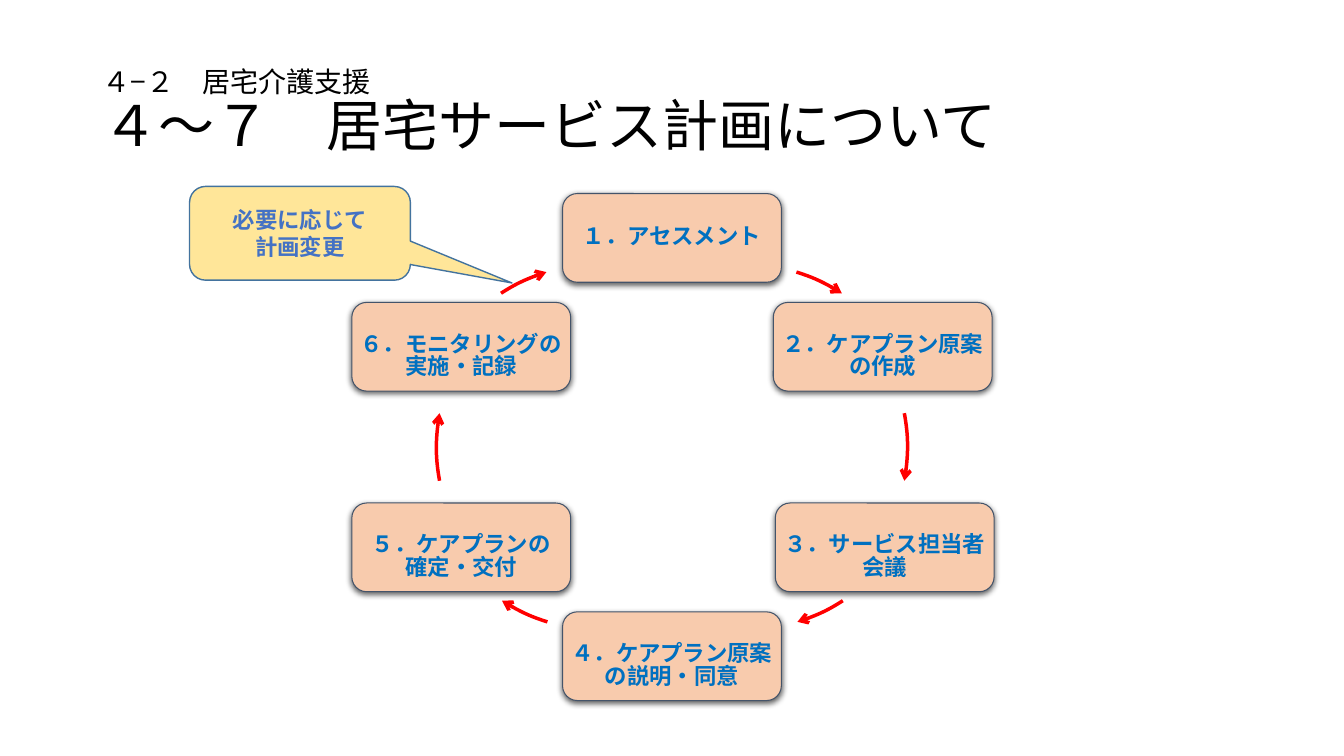
import pptx
import pptx.util
import pptx.dml.color
import pptx.enum.shapes
import pptx.enum.text
import pptx.oxml
import pptx.oxml.ns
from pptx.util import Inches

COLORS = {
    "title": "000000", "step": "F8CBAD", "step_line": "44546A",
    "step_text": "0070C0", "arrow": "FF0000", "note": "FFE699",
    "note_line": "43739E", "note_text": "4472C4", "shadow": "000000",
}
SHAPES = pptx.enum.shapes.MSO_SHAPE
CENTER = pptx.enum.text.PP_ALIGN.CENTER
LEFT = pptx.enum.text.PP_ALIGN.LEFT
NAMESPACE = pptx.oxml.ns.nsdecls("a")
STEP_SIZE = (2.17, 0.88)
CYCLE_WIDTH, CYCLE_HEIGHT = 13.33, 8.87  # twice the centre of the cycle
CIRCLE = 4.16  # side of the square around the circle of each arc

# Left, top, font and lines of each step
STEPS = [
    (5.58, 1.92, "Calibri", ["１．アセスメント"]),
    (7.67, 3.00, "Arial", ["２．ケアプラン原案の作成"]),
    (7.69, 4.99, "Arial", ["３．サービス担当者", "会議"]),
    (5.58, 6.07, "Calibri", ["４．ケアプラン原案", "の説明・同意"]),
    (3.49, 4.99, "Calibri", ["５．ケアプランの", "確定・交付"]),
    (3.49, 3.00, "Arial", ["６．モニタリングの実施・記録"]),
]
# Corner of the circle's square and Bezier points of the right-hand arrows
ARROWS = [
    ((5.18, 2.6), [(7.9, 2.7), (8.06, 2.75), (8.21, 2.82), (8.35, 2.91)]),
    ((4.84, 2.38), [(8.97, 4.1), (9.01, 4.32), (9.01, 4.55), (8.97, 4.77)]),
    ((5.21, 2.1), [(8.36, 5.96), (8.22, 6.05), (8.07, 6.12), (7.91, 6.17)]),
]


def rgb(name):
    return pptx.dml.color.RGBColor.from_string(COLORS[name])


def apply_format(target, values):
    for name, value in values.items():
        setattr(target, name, value)


def place(shape, *lengths):
    names = ("left", "top", "width", "height")
    apply_format(shape, dict(zip(names, map(Inches, lengths))))


def write_lines(frame, lines, color, font, sizes, align, spacing=None):
    for index, (line, size) in enumerate(zip(lines, sizes)):
        para = frame.paragraphs[0] if index == 0 else frame.add_paragraph()
        apply_format(para, {"alignment": align, "line_spacing": spacing})
        span = para.add_run()
        span.text = line
        apply_format(span.font, {"name": font, "size": pptx.util.Pt(size),
                                 "bold": color != "title"})
        span.font.color.rgb = rgb(color)


def set_line(shape, color, width):
    shape.line.color.rgb = rgb(color)
    shape.line.width = pptx.util.Pt(width)
    shape.shadow.inherit = False


def add_box(page, kind, lengths, fill, line, width):
    box = page.shapes.add_shape(kind, *map(Inches, lengths))
    box.fill.solid()
    box.fill.fore_color.rgb = rgb(fill)
    set_line(box, line, width)
    apply_format(box.text_frame, {
        "word_wrap": True,
        "vertical_anchor": pptx.enum.text.MSO_ANCHOR.MIDDLE})
    return box


def add_drop_shadow(shape):
    effects = shape._element.spPr.find(pptx.oxml.ns.qn("a:effectLst"))
    effects.append(pptx.oxml.parse_xml(
        f'<a:outerShdw {NAMESPACE} blurRad="57150" '
        'dist="19050" dir="5400000" algn="ctr" rotWithShape="0">'
        f'<a:srgbClr val="{COLORS["shadow"]}"><a:alpha val="63000"/>'
        '</a:srgbClr></a:outerShdw>'))


def add_step(page, left, top, font, lines):
    box = add_box(page, SHAPES.ROUNDED_RECTANGLE, (left, top, *STEP_SIZE),
                  "step", "step_line", 0.75)
    add_drop_shadow(box)
    first = top == STEPS[0][1]
    margins = (0.07, 0.07, 0.07, 0.09) if first else (0, 0.2, 0, 0)
    names = ("margin_left", "margin_top", "margin_right", "margin_bottom")
    apply_format(box.text_frame, dict(zip(names, map(Inches, margins))))
    write_lines(box.text_frame, lines, "step_text", font, [16] * len(lines),
                CENTER, 0.9 if first else pptx.util.Pt(16))


def add_arrow(page, corner, points):
    builder = page.shapes.build_freeform(*map(Inches, points[0]))
    builder.add_line_segments([tuple(map(Inches, points[-1]))], close=False)
    arrow = builder.convert_to_shape()
    place(arrow, *corner, CIRCLE, CIRCLE)
    arrow.fill.background()
    set_line(arrow, "arrow", 2.5)
    # Bend the outline into an arc within the circle's square
    start, *curve = [
        f'<a:pt x="{Inches(x - corner[0])}" y="{Inches(y - corner[1])}"/>'
        for x, y in points]
    properties = arrow._element.spPr
    outlines = properties.find(".//" + pptx.oxml.ns.qn("a:pathLst"))
    outlines[:] = [pptx.oxml.parse_xml(
        f'<a:path {NAMESPACE} w="{Inches(CIRCLE)}" h="{Inches(CIRCLE)}" '
        f'fill="none"><a:moveTo>{start}</a:moveTo>'
        f'<a:cubicBezTo>{"".join(curve)}</a:cubicBezTo></a:path>')]
    properties.find(pptx.oxml.ns.qn("a:ln")).append(pptx.oxml.parse_xml(
        f'<a:tailEnd {NAMESPACE} type="arrow"/>'))


def add_cycle(page):
    for step in STEPS:
        add_step(page, *step)
    # The left half is the right half turned about the centre
    for (left, top), points in ARROWS:
        add_arrow(page, (left, top), points)
        add_arrow(page,
                  (CYCLE_WIDTH - left - CIRCLE, CYCLE_HEIGHT - top - CIRCLE),
                  [(CYCLE_WIDTH - x, CYCLE_HEIGHT - y) for x, y in points])


def add_title(page):
    title = page.shapes.title
    place(title, 0.92, 0.4, 11.5, 1.45)
    apply_format(title.text_frame, {
        "word_wrap": True,
        "auto_size": pptx.enum.text.MSO_AUTO_SIZE.NONE,
        "vertical_anchor": pptx.enum.text.MSO_ANCHOR.MIDDLE})
    write_lines(title.text_frame,
                ["４−２　居宅介護支援", "４〜７　居宅サービス計画について"],
                "title", "Calibri", [20, 40], LEFT, 0.9)


def add_note(page):
    note = add_box(page, SHAPES.ROUNDED_RECTANGULAR_CALLOUT,
                   (1.88, 1.85, 2.19, 0.93), "note", "note_line", 1)
    for index, value in enumerate((0.96, 0.53, 0.17)):
        note.adjustments[index] = value
    write_lines(note.text_frame, ["必要に応じて", "計画変更"], "note_text",
                "Calibri", [16, 16], CENTER)


def main():
    deck = pptx.Presentation()
    apply_format(deck, {"slide_width": Inches(13.33),
                        "slide_height": Inches(7.5)})
    page = deck.slides.add_slide(deck.slide_layouts.get_by_name("Title Only"))
    add_title(page)
    add_cycle(page)
    add_note(page)
    deck.save("out.pptx")


if __name__ == "__main__":
    main()
